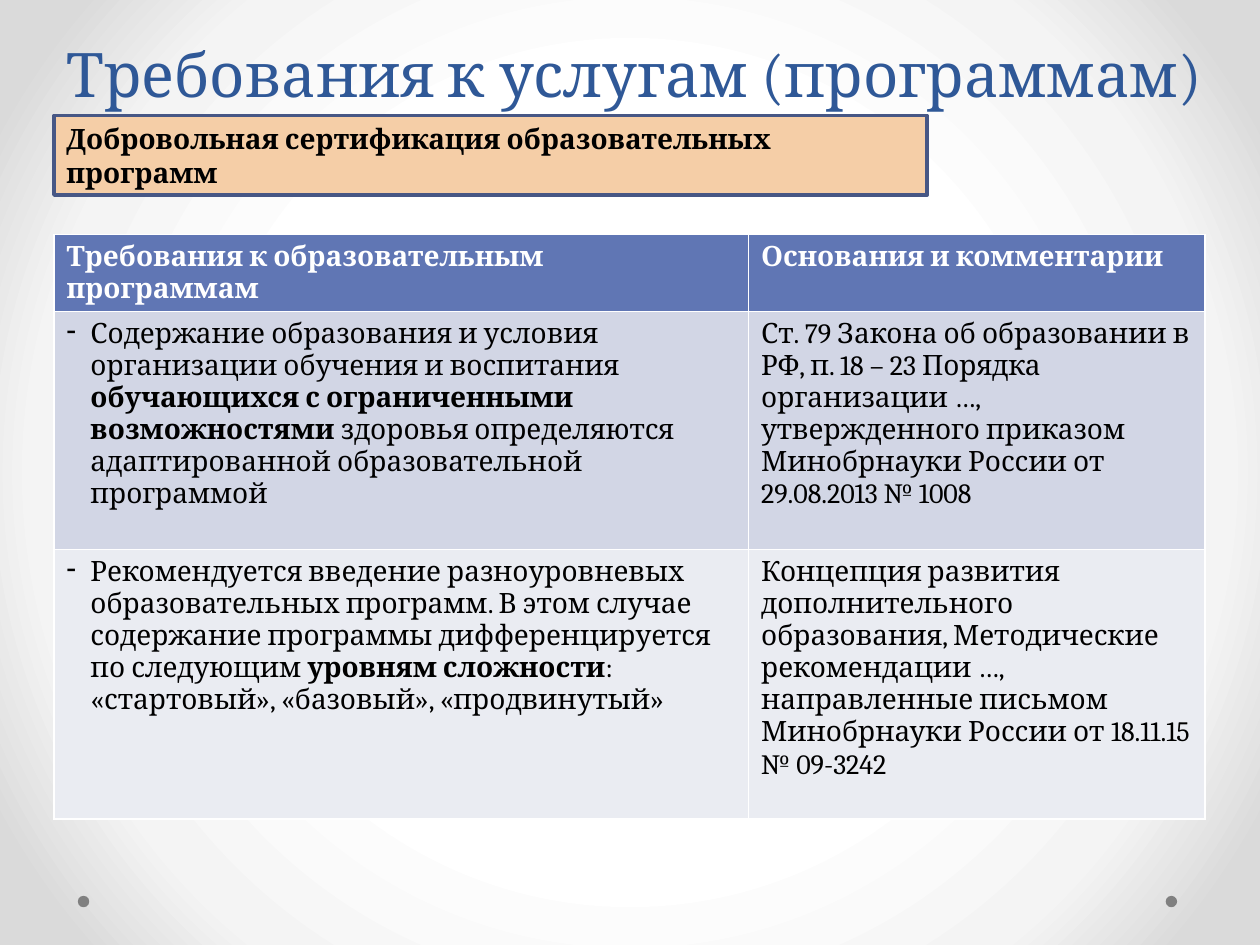
from pptx import Presentation
from pptx.dml.color import RGBColor
from pptx.enum import shapes, text
from pptx.oxml import parse_xml
from pptx.oxml.ns import nsdecls
from pptx.util import Cm, Pt

TITLE = "Требования к услугам (программам)"
SUBTITLE = "Добровольная сертификация образовательных программ"

# Each cell is a list of (wording, bold) runs.
HEADER = [
    [("Требования к образовательным программам", True)],
    [("Основания и комментарии", True)],
]
BODY = [
    [
        [("Содержание образования и условия организации обучения и воспитания ", False),
         ("обучающихся с ограниченными возможностями ", True),
         ("здоровья определяются адаптированной образовательной программой", False)],
        [("Ст. 79 Закона об образовании в РФ, п. 18 – 23 Порядка организации …, "
          "утвержденного приказом Минобрнауки России от 29.08.2013 № 1008", False)],
    ],
    [
        [("Рекомендуется введение разноуровневых образовательных программ. "
          "В этом случае содержание программы дифференцируется по следующим ", False),
         ("уровням сложности", True),
         (": «стартовый», «базовый», «продвинутый»", False)],
        [("Концепция развития дополнительного образования, Методические "
          "рекомендации …, направленные письмом Минобрнауки России "
          "от 18.11.15 № 09-3242", False)],
    ],
]

THEME = {
    "font": "Cambria", "title_size": 35.1, "text_size": 16,
    "title": "2F5897", "text": "000000", "header_text": "FFFFFF",
    "header": "6076B4", "bands": ["D2D6E5", "EAECF2"],
    "box": "F5CEA7", "box_line": "475785", "dot": "808080",
    "background": [(50, "FFFFFF"), (76, "F4F4F4"), (92, "DADADA")],
}

LEFT = 1.09
COLUMNS = [14.0, 9.2]
ROWS = [1.53, 4.8, 5.43]
DOT_LEFTS = [1.57, 23.5]
DOT_TOP, DOT_SIZE = 18.06, 0.23
HANGING = Cm(0.48)


def rgb(value):
    return RGBColor.from_string(value)


def set_background(s):
    """Radial gradient that darkens towards the corners."""
    stops = "".join(f'<a:gs pos="{pos * 1000}"><a:srgbClr val="{color}"/></a:gs>'
                    for pos, color in THEME["background"])
    gradient = parse_xml(
        f'<a:gradFill {nsdecls("a")} rotWithShape="1"><a:gsLst>{stops}</a:gsLst>'
        '<a:path path="circle"><a:fillToRect l="50000" t="50000" r="50000" b="50000"/>'
        '</a:path></a:gradFill>')
    s.background.fill.solid()
    solid = s._element.find(".//{*}bgPr/{*}solidFill")
    solid.getparent().replace(solid, gradient)


def write(tf, runs, color, size=THEME["text_size"]):
    p = tf.paragraphs[0]
    p.alignment = text.PP_ALIGN.LEFT
    for wording, bold in runs:
        r = p.add_run()
        r.text = wording
        r.font.name = THEME["font"]
        r.font.size = Pt(size)
        r.font.bold = bold
        r.font.color.rgb = rgb(color)
    return p


def add_dash(p):
    pPr = p._p.get_or_add_pPr()
    pPr.set("marL", str(HANGING))
    pPr.set("indent", str(-HANGING))
    pPr.append(parse_xml(f'<a:buChar {nsdecls("a")} char="-"/>'))


def add_shape(s, kind, left, top, width, height, fill):
    sp = s.shapes.add_shape(kind, Cm(left), Cm(top), Cm(width), Cm(height))
    sp.shadow.inherit = False
    sp.fill.solid()
    sp.fill.fore_color.rgb = rgb(fill)
    sp.line.fill.background()
    return sp


def add_title(s):
    sp = s.shapes.title
    sp.left, sp.top, sp.width, sp.height = Cm(LEFT), Cm(0.25), Cm(23.4), Cm(2.09)
    tf = sp.text_frame
    tf.auto_size = text.MSO_AUTO_SIZE.NONE
    tf.vertical_anchor = text.MSO_ANCHOR.BOTTOM
    write(tf, [(TITLE, False)], THEME["title"], THEME["title_size"])


def add_subtitle(s):
    sp = add_shape(s, shapes.MSO_SHAPE.RECTANGLE, LEFT, 2.33, 17.6, 1.6, THEME["box"])
    sp.line.color.rgb = rgb(THEME["box_line"])
    sp.line.width = Pt(2.25)
    tf = sp.text_frame
    tf.word_wrap = True
    tf.vertical_anchor = text.MSO_ANCHOR.MIDDLE
    write(tf, [(SUBTITLE, True)], THEME["text"])


def add_requirements(s):
    rows = [HEADER] + BODY
    table = s.shapes.add_table(len(rows), len(COLUMNS), Cm(LEFT), Cm(4.73),
                               Cm(sum(COLUMNS)), Cm(sum(ROWS))).table
    for column, width in zip(table.columns, COLUMNS):
        column.width = Cm(width)
    for row, height in zip(table.rows, ROWS):
        row.height = Cm(height)
    fills = [THEME["header"]] + THEME["bands"]
    for i, cells in enumerate(rows):
        color = THEME["text"] if i else THEME["header_text"]
        for j, runs in enumerate(cells):
            cell = table.cell(i, j)
            cell.fill.solid()
            cell.fill.fore_color.rgb = rgb(fills[i])
            p = write(cell.text_frame, runs, color)
            if i and j == 0:
                add_dash(p)


def main():
    prs = Presentation()
    prs.slide_width, prs.slide_height = Cm(25.4), Cm(19.05)
    s = prs.slides.add_slide(prs.slide_layouts[5])
    set_background(s)
    for left in DOT_LEFTS:
        add_shape(s, shapes.MSO_SHAPE.OVAL, left, DOT_TOP, DOT_SIZE, DOT_SIZE, THEME["dot"])
    add_title(s)
    add_subtitle(s)
    add_requirements(s)
    prs.save("out.pptx")


if __name__ == "__main__":
    main()
